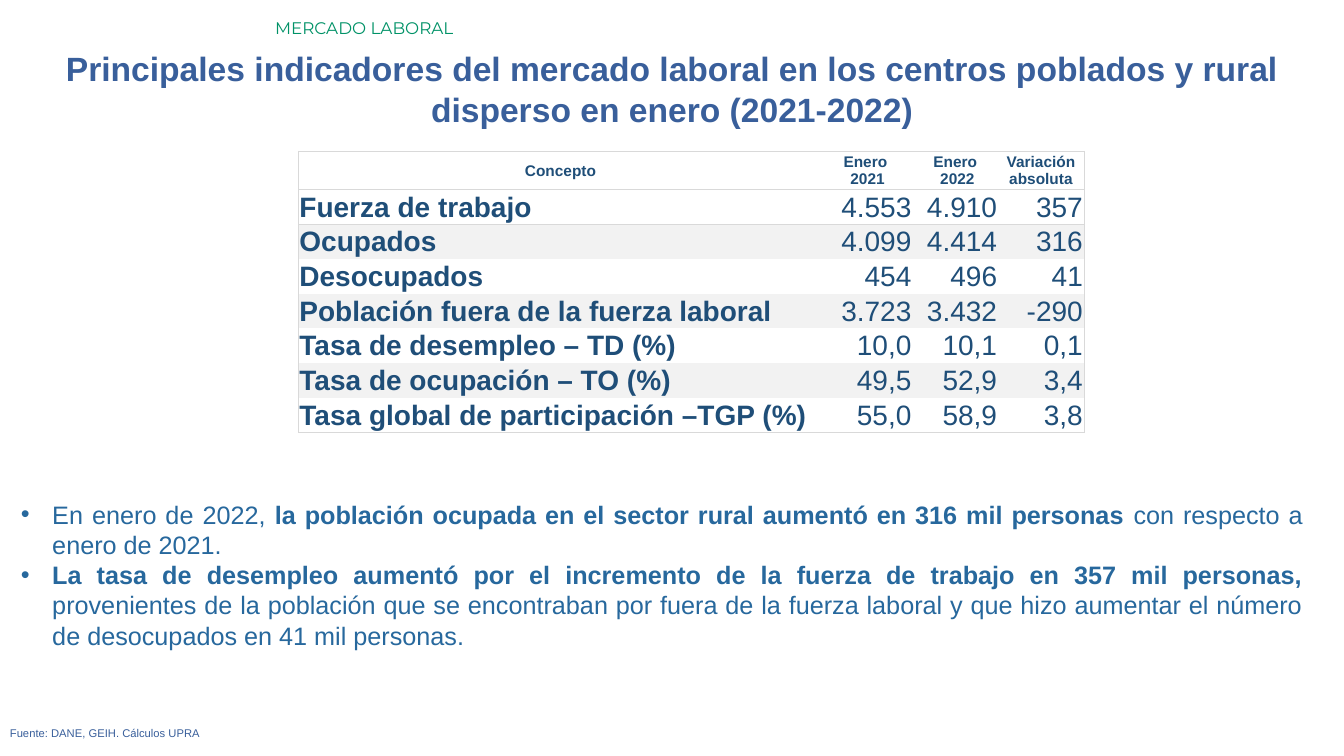
from lxml import etree
from pptx import Presentation
from pptx.dml.color import RGBColor
from pptx.enum.text import MSO_ANCHOR, PP_ALIGN
from pptx.oxml.ns import qn
from pptx.util import Inches, Pt

LEFT, CENTER, RIGHT, JUSTIFY = PP_ALIGN.LEFT, PP_ALIGN.CENTER, PP_ALIGN.RIGHT, PP_ALIGN.JUSTIFY
MIDDLE = MSO_ANCHOR.MIDDLE

GREEN = RGBColor(0x00, 0x92, 0x67)
TITLE_BLUE = RGBColor(0x39, 0x5F, 0x9B)
BODY_BLUE = RGBColor(0x27, 0x68, 0x9D)
TABLE_BLUE = RGBColor(0x1F, 0x4E, 0x78)
BAND_GRAY = RGBColor(0xF2, 0xF2, 0xF2)
BORDER_GRAY = RGBColor(0xD9, 0xD9, 0xD9)

COLUMN_WIDTHS = (5.2, 0.89, 0.85, 0.85)
HEADER_HEIGHT = 0.38
BODY_HEIGHT = 2.41
INDICATORS = (
    ("Concepto", "Enero \n2021", "Enero\n 2022", "Variación absoluta"),
    ("Fuerza de trabajo", "4.553", "4.910", "357"),
    ("Ocupados", "4.099", "4.414", "316"),
    ("Desocupados", "454", "496", "41"),
    ("Población fuera de la fuerza laboral", "3.723", "3.432", "-290"),
    ("Tasa de desempleo – TD (%)", "10,0", "10,1", "0,1"),
    ("Tasa de ocupación – TO (%)", "49,5", "52,9", "3,4"),
    ("Tasa global de participación –TGP (%)", "55,0", "58,9", "3,8"),
)
FINDINGS = (
    (
        ("En enero de 2022, ", False),
        ("la población ocupada en el sector rural aumentó en 316 mil personas ", True),
        ("con respecto a enero de 2021.", False),
    ),
    (
        ("La tasa de desempleo aumentó por el incremento de la fuerza de trabajo "
         "en 357 mil personas, ", True),
        ("provenientes de la población que se encontraban por fuera de la fuerza laboral "
         "y que hizo aumentar el número de desocupados en 41 mil personas.", False),
    ),
)


def style_run(run, size, color, bold=False, font="Arial"):
    run.font.size = Pt(size)
    run.font.color.rgb = color
    run.font.bold = bold
    run.font.name = font


def add_text_frame(slide, left, top, width, height):
    frame = slide.shapes.add_textbox(
        Inches(left), Inches(top), Inches(width), Inches(height)).text_frame
    frame.word_wrap = True
    return frame


def add_label(slide, box, text, size, color, align=LEFT, bold=False, font="Arial"):
    paragraph = add_text_frame(slide, *box).paragraphs[0]
    paragraph.text = text
    paragraph.alignment = align
    style_run(paragraph.runs[0], size, color, bold, font)


def add_bullets(slide, box, findings):
    frame = add_text_frame(slide, *box)
    for index, finding in enumerate(findings):
        paragraph = frame.add_paragraph() if index else frame.paragraphs[0]
        paragraph.alignment = JUSTIFY
        properties = paragraph._p.get_or_add_pPr()
        properties.set("marL", str(Inches(0.31)))
        properties.set("indent", str(-Inches(0.31)))
        etree.SubElement(properties, qn("a:buFont"), typeface="Arial")
        etree.SubElement(properties, qn("a:buChar"), char="•")
        for text, bold in finding:
            run = paragraph.add_run()
            run.text = text
            style_run(run, 18, BODY_BLUE, bold)


def set_borders(cell, visible_sides):
    properties = cell._tc.get_or_add_tcPr()
    for side in "LRTB":
        line = etree.SubElement(properties, qn(f"a:ln{side}"), w=str(Pt(0.5)))
        if side in visible_sides:
            fill = etree.SubElement(line, qn("a:solidFill"))
            etree.SubElement(fill, qn("a:srgbClr"), val=str(BORDER_GRAY))
        else:
            etree.SubElement(line, qn("a:noFill"))


def visible_sides(row, column):
    last_row, last_column = len(INDICATORS) - 1, len(COLUMN_WIDTHS) - 1
    rules = {
        "L": column == 0,
        "R": column == last_column,
        "T": row <= 2,
        "B": row in (0, 1, last_row),
    }
    return [side for side, visible in rules.items() if visible]


def fill_cell(cell, text, row, column):
    is_header = row == 0
    cell.margin_left = cell.margin_top = cell.margin_right = Inches(0.01)
    cell.margin_bottom = 0
    cell.vertical_anchor = MIDDLE
    set_borders(cell, visible_sides(row, column))
    if row and row % 2 == 0:
        cell.fill.solid()
        cell.fill.fore_color.rgb = BAND_GRAY
    else:
        cell.fill.background()
    cell.text_frame.text = text
    body_align = RIGHT if column else LEFT
    for paragraph in cell.text_frame.paragraphs:
        paragraph.alignment = CENTER if is_header else body_align
        style_run(paragraph.runs[0], 11 if is_header else 20, TABLE_BLUE,
                  is_header or column == 0)


def add_indicator_table(slide, left, top):
    table = slide.shapes.add_table(
        len(INDICATORS), len(COLUMN_WIDTHS), Inches(left), Inches(top),
        Inches(sum(COLUMN_WIDTHS)), Inches(HEADER_HEIGHT + BODY_HEIGHT)).table
    table.first_row = False
    table.horz_banding = False
    for column, width in zip(table.columns, COLUMN_WIDTHS):
        column.width = Inches(width)
    for row, values in enumerate(INDICATORS):
        table.rows[row].height = Inches(
            BODY_HEIGHT / (len(INDICATORS) - 1) if row else HEADER_HEIGHT)
        for column, text in enumerate(values):
            fill_cell(table.cell(row, column), text, row, column)


def main():
    presentation = Presentation()
    presentation.slide_width = Inches(13.33)
    presentation.slide_height = Inches(7.5)
    slide = presentation.slides.add_slide(presentation.slide_layouts[6])
    add_label(slide, (2.63, 0.13, 10.7, 0.3), "MERCADO LABORAL", 12, GREEN,
              font="Montserrat")
    add_label(slide, (0, 0.43, 13.33, 0.91),
              "Principales indicadores del mercado laboral en los centros poblados "
              "y rural disperso en enero (2021-2022)", 24, TITLE_BLUE, CENTER, True)
    add_label(slide, (0, 7.16, 12.91, 0.24), "Fuente: DANE, GEIH. Cálculos UPRA",
              8, TITLE_BLUE, JUSTIFY)
    add_bullets(slide, (0.11, 4.9, 12.91, 1.62), FINDINGS)
    add_indicator_table(slide, 2.96, 1.5)
    presentation.save("out.pptx")


if __name__ == "__main__":
    main()
